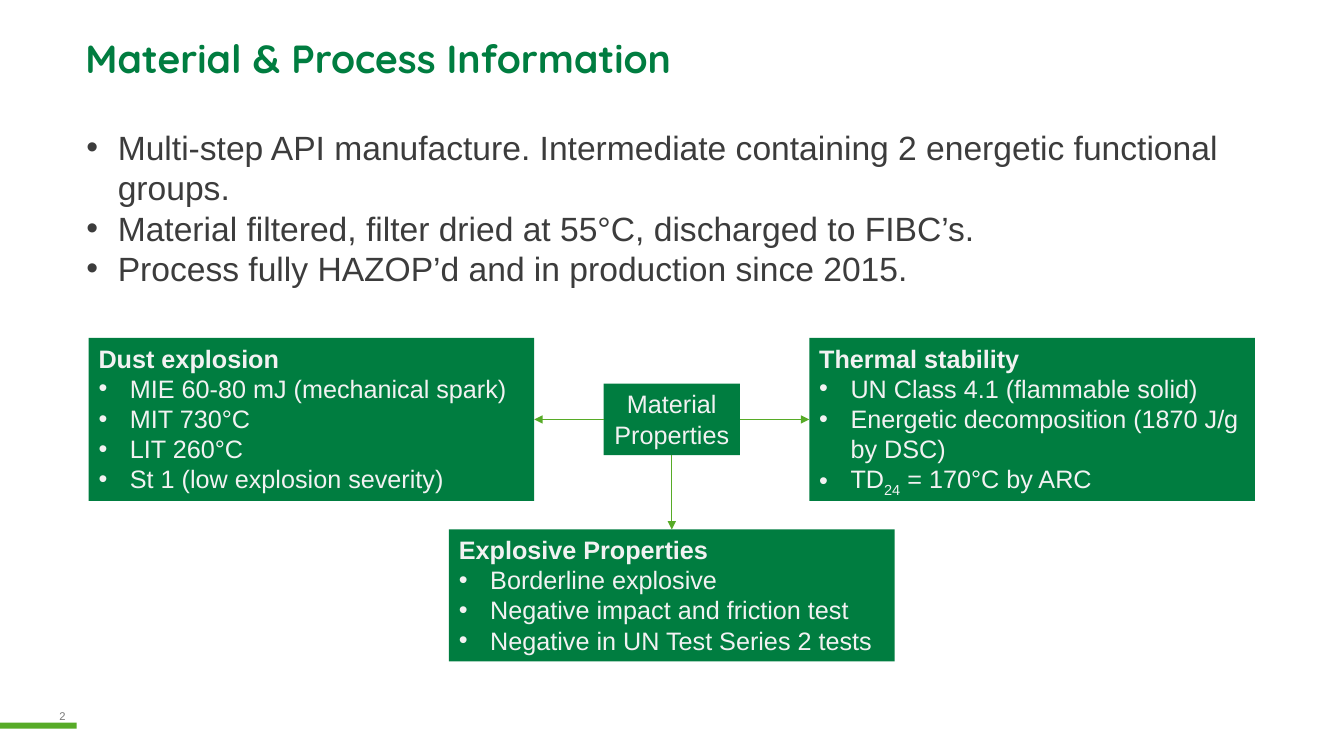
"""Builds the Material & Process Information slide."""
from lxml import etree
from pptx import Presentation
from pptx.dml.color import RGBColor
from pptx.enum.shapes import MSO_CONNECTOR, MSO_SHAPE
from pptx.enum.text import MSO_ANCHOR, MSO_AUTO_SIZE, PP_ALIGN
from pptx.oxml.ns import qn
from pptx.util import Cm, Pt

STRAIGHT = MSO_CONNECTOR.STRAIGHT
RECTANGLE = MSO_SHAPE.RECTANGLE
TOP, MIDDLE = MSO_ANCHOR.TOP, MSO_ANCHOR.MIDDLE
NO_AUTO_SIZE = MSO_AUTO_SIZE.NONE
LEFT, CENTER = PP_ALIGN.LEFT, PP_ALIGN.CENTER
SITE_TOP, SITE_LEFT, SITE_BOTTOM, SITE_RIGHT = range(4)

DARK_GREEN = RGBColor(0x00, 0x7D, 0x40)
LIGHT_GREEN = RGBColor(0x57, 0xAB, 0x27)
DARK_GREY = RGBColor(0x3C, 0x3C, 0x3C)
MID_GREY = RGBColor(0x79, 0x79, 0x79)
OFF_WHITE = RGBColor(0xF2, 0xF2, 0xF2)

BODY_FONT = "Arial"
TITLE_FONT = "Quicksand"
BULLET_INDENT = Cm(0.79)
SUBSCRIPT_MARK = "_"

AXIS_X, AXIS_Y = 16.93, 10.57
BOX_WIDTH, SIDE_HEIGHT = 11.23, 4.11
SIDE_OFFSET = 9.08


class SlideBuilder:
    """Holds the style and the current slide, and adds each kind of element."""

    def __init__(self, presentation):
        layout = presentation.slide_layouts.get_by_name("Title Only")
        self.slide = presentation.slides.add_slide(layout)
        self.shapes = self.slide.shapes

    def style(self, paragraph, size, color, bold=False, font=BODY_FONT, align=LEFT):
        paragraph.alignment = align
        for run in paragraph.runs:
            run.font.name = font
            run.font.size = Pt(size)
            run.font.bold = bold
            run.font.color.rgb = color

    def bullet(self, paragraph):
        properties = paragraph._p.get_or_add_pPr()
        properties.set("marL", str(BULLET_INDENT))
        properties.set("indent", str(-BULLET_INDENT))
        etree.SubElement(properties, qn("a:buFont"), typeface=BODY_FONT)
        etree.SubElement(properties, qn("a:buChar"), char="•")

    def fill_text(self, frame, lines, size, color, heading=None, bullets=False, align=LEFT):
        texts = [heading, *lines] if heading else lines
        for index, text in enumerate(texts):
            paragraph = frame.add_paragraph() if index else frame.paragraphs[0]
            is_heading = bool(heading) and index == 0
            if bullets and not is_heading:
                self.bullet(paragraph)
            for position, piece in enumerate(text.split(SUBSCRIPT_MARK)):
                run = paragraph.add_run()
                run.text = piece
                if position % 2:
                    run._r.get_or_add_rPr().set("baseline", "-25000")
            self.style(paragraph, size, color, bold=is_heading, align=align)

    def title(self, text, left, top, width, height):
        title = self.shapes.title
        title.left, title.top = Cm(left), Cm(top)
        title.width, title.height = Cm(width), Cm(height)
        frame = title.text_frame
        frame.text = text
        frame.auto_size = NO_AUTO_SIZE
        frame.vertical_anchor = MIDDLE
        paragraph = frame.paragraphs[0]
        paragraph.line_spacing = 0.9
        self.style(paragraph, 28, DARK_GREEN, bold=True, font=TITLE_FONT)

    def text(self, lines, left, top, width, height, size, color, wrap=True, **options):
        box = self.shapes.add_textbox(Cm(left), Cm(top), Cm(width), Cm(height))
        box.text_frame.word_wrap = wrap
        self.fill_text(box.text_frame, lines, size, color, **options)

    def rectangle(self, left, top, width, height, fill):
        shape = self.shapes.add_shape(RECTANGLE, Cm(left), Cm(top), Cm(width), Cm(height))
        shape.shadow.inherit = False
        shape.fill.solid()
        shape.fill.fore_color.rgb = fill
        shape.line.fill.background()
        return shape

    def box(self, lines, center_x, top, width, height, wrap=True, **options):
        shape = self.rectangle(center_x - width / 2, top, width, height, DARK_GREEN)
        shape.text_frame.word_wrap = wrap
        shape.text_frame.vertical_anchor = TOP
        self.fill_text(shape.text_frame, lines, 18, OFF_WHITE, **options)
        return shape

    def arrow(self, source, source_site, target, target_site):
        connector = self.shapes.add_connector(STRAIGHT, 0, 0, 0, 0)
        connector.begin_connect(source, source_site)
        connector.end_connect(target, target_site)
        connector.line.color.rgb = LIGHT_GREEN
        connector.line.width = Pt(0.5)
        etree.SubElement(connector.line._get_or_add_ln(), qn("a:tailEnd"), type="triangle")
        etree.SubElement(connector._element.spPr, qn("a:effectLst"))


def main():
    presentation = Presentation()
    presentation.slide_width, presentation.slide_height = Cm(33.87), Cm(19.05)
    builder = SlideBuilder(presentation)

    builder.text(["2"], 1.04, 17.75, 1.07, 0.61, 8, MID_GREY, wrap=False, align=CENTER)
    builder.rectangle(0, 18.21, 1.93, 0.15, LIGHT_GREEN)
    builder.title("Material & Process Information", 1.9, 0.84, 29.49, 1.4)
    builder.text([
        "Multi-step API manufacture. Intermediate containing 2 energetic functional groups.",
        "Material filtered, filter dried at 55°C, discharged to FIBC’s.",
        "Process fully HAZOP’d and in production since 2015.",
    ], 1.93, 3.07, 29.46, 4.37, 24, DARK_GREY, bullets=True)

    hub = builder.box(["Material", "Properties"], AXIS_X, AXIS_Y - 0.9, 3.43, 1.8,
                      wrap=False, align=CENTER)
    side_top = AXIS_Y - SIDE_HEIGHT / 2
    dust = builder.box([
        "MIE 60-80 mJ (mechanical spark)",
        "MIT 730°C",
        "LIT 260°C",
        "St 1 (low explosion severity)",
    ], AXIS_X - SIDE_OFFSET, side_top, BOX_WIDTH, SIDE_HEIGHT,
        heading="Dust explosion", bullets=True)
    thermal = builder.box([
        "UN Class 4.1 (flammable solid)",
        "Energetic decomposition (1870 J/g by DSC)",
        "TD_24_ = 170°C by ARC",
    ], AXIS_X + SIDE_OFFSET, side_top, BOX_WIDTH, SIDE_HEIGHT,
        heading="Thermal stability", bullets=True)
    explosive = builder.box([
        "Borderline explosive",
        "Negative impact and friction test",
        "Negative in UN Test Series 2 tests",
    ], AXIS_X, 13.34, BOX_WIDTH, 3.33, heading="Explosive Properties", bullets=True)

    builder.arrow(hub, SITE_LEFT, dust, SITE_RIGHT)
    builder.arrow(hub, SITE_RIGHT, thermal, SITE_LEFT)
    builder.arrow(hub, SITE_BOTTOM, explosive, SITE_TOP)

    presentation.save("out.pptx")


if __name__ == "__main__":
    main()
